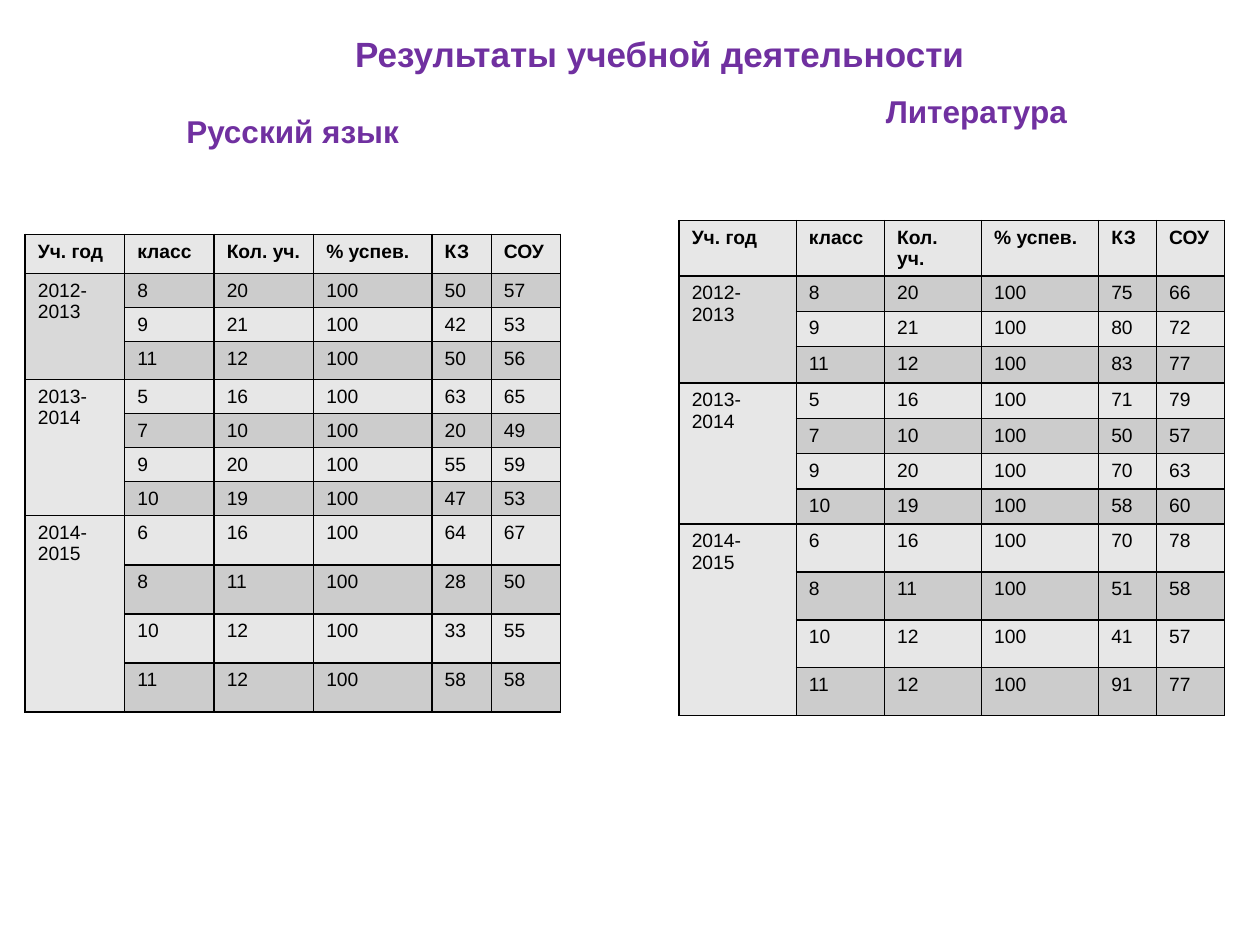
from dataclasses import dataclass

from lxml.etree import SubElement
from pptx import Presentation
from pptx.dml.color import RGBColor
from pptx.enum.text import MSO_AUTO_SIZE, PP_ALIGN
from pptx.oxml.ns import qn
from pptx.util import Inches, Pt


@dataclass(frozen=True)
class Theme:
    font: str = "Arial"
    heading: str = "7030A0"
    ink: str = "000000"
    light: str = "E7E7E7"
    band: str = "CCCCCC"
    first_year: str = "D9D9D9"
    title_size: int = 20
    subject_size: int = 18
    cell_size: int = 11
    border_width: int = 1


@dataclass(frozen=True)
class Heading:
    text: str
    left: float
    top: float
    width: float
    height: float
    size: int
    align: PP_ALIGN = PP_ALIGN.LEFT
    wrap: bool = True


@dataclass(frozen=True)
class ResultsTable:
    left: float
    top: float
    height: float
    columns: list[float]
    rows: list[float]
    quality: list[int]
    level: list[int]


THEME = Theme()
HEADER = ["Уч. год", "класс", "Кол. уч.", "% успев.", "КЗ", "СОУ"]
YEARS = [("2012-2013", 3), ("2013-2014", 4), ("2014-2015", 4)]
CLASSES = [8, 9, 11, 5, 7, 9, 10, 6, 8, 10, 11]
PUPILS = [20, 21, 12, 16, 10, 20, 19, 16, 11, 12, 12]

HEADINGS = [
    Heading("Результаты учебной деятельности", 2.72, 0.21, 5.3, 0.44, THEME.title_size),
    Heading("Русский язык", 1.38, 0.84, 1.91, 0.4, THEME.subject_size, wrap=False),
    Heading("Литература", 6.65, 0.68, 2.2, 0.4, THEME.subject_size, PP_ALIGN.CENTER),
]
TABLES = [
    ResultsTable(
        0.2, 1.86, 3.88,
        [0.79, 0.71, 0.79, 0.94, 0.47, 0.55],
        [0.31, 0.24, 0.27, 0.3, 0.24, 0.27, 0.22, 0.25] + [0.39] * 4,
        [50, 42, 50, 63, 20, 55, 47, 64, 28, 33, 58],
        [57, 53, 56, 65, 49, 59, 53, 67, 50, 55, 58],
    ),
    ResultsTable(
        5.39, 1.75, 3.83,
        [0.93, 0.7, 0.77, 0.93, 0.46, 0.54],
        [0.31, 0.28, 0.28, 0.29] + [0.28] * 4 + [0.38] * 4,
        [75, 80, 83, 71, 50, 70, 58, 70, 51, 41, 91],
        [66, 72, 77, 79, 57, 63, 60, 78, 58, 57, 77],
    ),
]


def style_text(frame, size: int, color: str, bold: bool) -> None:
    for para in frame.paragraphs:
        for span in para.runs:
            span.font.name = THEME.font
            span.font.size = Pt(size)
            span.font.bold = bold
            span.font.color.rgb = RGBColor.from_string(color)


def add_heading(slide, heading: Heading) -> None:
    box = slide.shapes.add_textbox(
        Inches(heading.left), Inches(heading.top),
        Inches(heading.width), Inches(heading.height),
    )
    frame = box.text_frame
    frame.word_wrap = heading.wrap
    frame.auto_size = MSO_AUTO_SIZE.SHAPE_TO_FIT_TEXT
    frame.text = heading.text
    frame.paragraphs[0].alignment = heading.align
    style_text(frame, heading.size, THEME.heading, True)


def style_cell(cell, fill: str) -> None:
    # Borders come before the fill in the cell properties
    properties = cell._tc.get_or_add_tcPr()
    for side in ("lnL", "lnR", "lnT", "lnB"):
        line = SubElement(properties, qn(f"a:{side}"), w=str(Pt(THEME.border_width)))
        solid = SubElement(line, qn("a:solidFill"))
        SubElement(solid, qn("a:srgbClr"), val=THEME.ink)
    cell.fill.solid()
    cell.fill.fore_color.rgb = RGBColor.from_string(fill)


def set_cell_text(cell, text: str, bold: bool = False) -> None:
    cell.text_frame.text = text
    style_text(cell.text_frame, THEME.cell_size, THEME.ink, bold)


def add_results(slide, results: ResultsTable) -> None:
    shape = slide.shapes.add_table(
        len(results.rows), len(HEADER), Inches(results.left), Inches(results.top),
        Inches(sum(results.columns)), Inches(results.height),
    )
    table = shape.table
    table.horz_banding = False
    for column, width in zip(table.columns, results.columns):
        column.width = Inches(width)
    for row, height in zip(table.rows, results.rows):
        row.height = Inches(height)
    shape.height = Inches(results.height)

    # Fills and borders
    for row_index, row in enumerate(table.rows):
        for column_index, cell in enumerate(row.cells):
            banded = row_index % 2 and column_index
            style_cell(cell, THEME.band if banded else THEME.light)

    # Header and figures
    for column_index, label in enumerate(HEADER):
        set_cell_text(table.cell(0, column_index), label, bold=True)
    figures = zip(CLASSES, PUPILS, [100] * len(CLASSES), results.quality, results.level)
    for row_index, values in enumerate(figures, start=1):
        for column_index, value in enumerate(values, start=1):
            set_cell_text(table.cell(row_index, column_index), str(value))

    # School years, each merged over its classes
    first = 1
    for year, count in YEARS:
        cell = table.cell(first, 0)
        cell.merge(table.cell(first + count - 1, 0))
        cell.margin_right = Inches(0.12)
        set_cell_text(cell, year)
        if first == 1:
            cell.fill.fore_color.rgb = RGBColor.from_string(THEME.first_year)
        first += count


def main() -> None:
    deck = Presentation()
    deck.slide_width, deck.slide_height = Inches(10), Inches(7.5)
    slide = deck.slides.add_slide(deck.slide_layouts[6])
    for results in TABLES:
        add_results(slide, results)
    for heading in HEADINGS:
        add_heading(slide, heading)
    deck.save("out.pptx")


if __name__ == "__main__":
    main()
